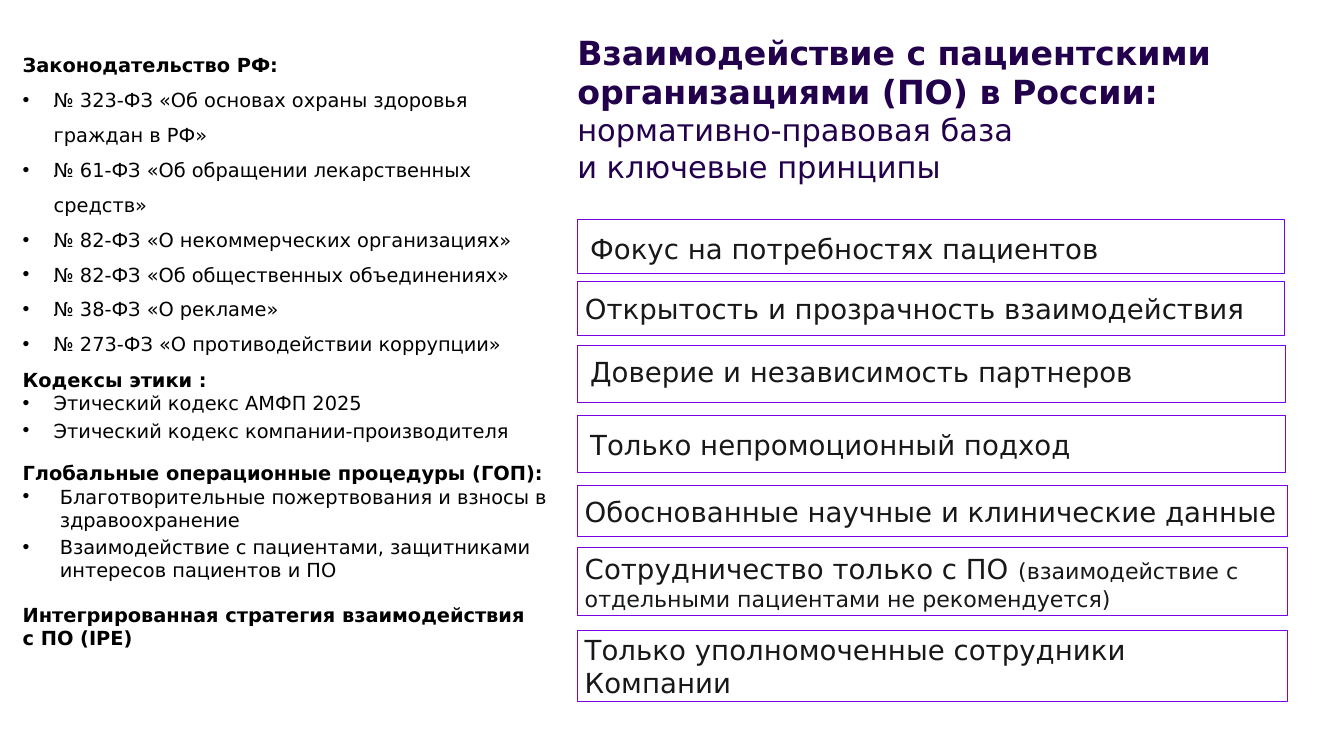
from pptx import Presentation, util as u
from pptx.dml.color import RGBColor
from pptx.enum import shapes, text
from pptx.oxml.ns import qn
from lxml import etree

FONT = "DejaVu Sans"
COLORS = {"title": "23004C", "body": "000000", "principle": "181818",
          "box": "FFFFFF", "border": "7A00E6"}
MM_PER_INCH = 25.4
BODY_SIZE = 18.4
PRINCIPLE_SIZE = 26.25
LEFT_X = 0.2
BOX_X = 7.61

LAWS = ["№ 323-ФЗ «Об основах охраны здоровья граждан в РФ»",
        "№ 61-ФЗ «Об обращении лекарственных средств»",
        "№ 82-ФЗ «О некоммерческих организациях»",
        "№ 82-ФЗ «Об общественных объединениях»",
        "№ 38-ФЗ «О рекламе»",
        "№ 273-ФЗ «О противодействии коррупции»"]
CODES = ["Этический кодекс АМФП 2025",
         "Этический кодекс компании-производителя"]
PROCEDURES = ["Благотворительные пожертвования и взносы в здравоохранение",
              "Взаимодействие с пациентами, защитниками интересов пациентов и ПО"]

# Heading, bullets, top, width, height, indent, line spacing, space after
SECTIONS = [
    ("Законодательство РФ:", LAWS, 0.5, 6.85, 4.28, 0.41, 1.5, 0),
    ("Кодексы этики :", CODES, 4.8, 6.71, 1.08, 0.41, 1, 3.9),
    ("Глобальные операционные процедуры (ГОП):", PROCEDURES,
     6.03, 7.25, 1.7, 0.49, 1, 3.9),
    ("Интегрированная стратегия взаимодействия с ПО (IPE)", [],
     7.9, 6.85, 0.72, 0, 1, 0),
]

# Principles whose text sits in the box: text, note, top, width, height
FILLED_BOXES = [
    ("Открытость и прозрачность взаимодействия", "", 3.71, 9.32, 0.71),
    ("Обоснованные научные и клинические данные", "", 6.4, 9.36, 0.67),
    ("Сотрудничество только с ПО ",
     "(взаимодействие с отдельными пациентами не рекомендуется)", 7.22, 9.36, 0.89),
    ("Только уполномоченные сотрудники Компании", "", 8.31, 9.36, 0.94),
]

# Principles with a separate label: text, box top, width, height, label place, insets
LABELLED_BOXES = [
    ("Фокус на потребностях пациентов", 2.89, 9.32, 0.72,
     (7.68, 3.01, 9.29, 0.54), (0.1, 0.05)),
    ("Доверие и независимость партнеров", 4.55, 9.34, 0.75,
     (7.68, 4.63, 9.29, 0.54), (0.1, 0.05)),
    ("Только непромоционный подход", 5.48, 9.34, 0.75,
     (7.65, 5.57, 8.74, 0.57), (0.13, 0.07)),
]


def inches(*values):
    return [u.Inches(v) for v in values]


def add_run(p, words, size, color, bold=False):
    r = p.add_run()
    r.text = words
    r.font.name = FONT
    r.font.size = u.Pt(size)
    r.font.bold = bold
    r.font.color.rgb = RGBColor.from_string(COLORS[color])


def set_bullet(p, indent):
    pPr = p._p.get_or_add_pPr()
    pPr.set("marL", str(u.Inches(indent)))
    pPr.set("indent", str(-u.Inches(indent)))
    etree.SubElement(pPr, qn("a:buFont")).set("typeface", "Arial")
    etree.SubElement(pPr, qn("a:buChar")).set("char", "•")


def add_textbox(parent, place, insets=(0.1, 0.05), grow=True):
    tf = parent.add_textbox(*inches(*place)).text_frame
    tf.word_wrap = True
    tf.auto_size = (text.MSO_AUTO_SIZE.SHAPE_TO_FIT_TEXT if grow
                    else text.MSO_AUTO_SIZE.NONE)
    tf.margin_left = tf.margin_right = u.Inches(insets[0])
    tf.margin_top = tf.margin_bottom = u.Inches(insets[1])
    return tf


def add_section(parent, heading, bullets, top, width, height, indent, spacing, after):
    tf = add_textbox(parent, (LEFT_X, top, width, height))
    p = tf.paragraphs[0]
    p.line_spacing = spacing
    add_run(p, heading, BODY_SIZE, "body", bold=True)
    for words in bullets:
        p = tf.add_paragraph()
        set_bullet(p, indent)
        p.line_spacing = spacing
        p.space_after = u.Pt(after)
        add_run(p, words, BODY_SIZE, "body")


def add_box(parent, top, width, height):
    sp = parent.add_shape(shapes.MSO_SHAPE.RECTANGLE,
                          *inches(BOX_X, top, width, height))
    sp.shadow.inherit = False
    sp.fill.solid()
    sp.fill.fore_color.rgb = RGBColor.from_string(COLORS["box"])
    sp.line.color.rgb = RGBColor.from_string(COLORS["border"])
    sp.line.width = u.Pt(1)
    return sp


def add_filled_box(parent, words, note, top, width, height):
    tf = add_box(parent, top, width, height).text_frame
    tf.word_wrap = True
    tf.margin_right = u.Inches(0.12)
    tf.vertical_anchor = text.MSO_ANCHOR.MIDDLE
    p = tf.paragraphs[0]
    p.alignment = text.PP_ALIGN.LEFT
    add_run(p, words, PRINCIPLE_SIZE, "principle")
    if note:
        add_run(p, note, 21, "principle")


def add_labelled_box(parent, words, top, width, height, place, insets):
    group = parent.add_group_shape().shapes
    add_box(group, top, width, height)
    tf = add_textbox(group, place, insets)
    add_run(tf.paragraphs[0], words, PRINCIPLE_SIZE, "principle")


def add_title(parent):
    tf = add_textbox(parent, (BOX_X, 0.42, 9.51, 2.17), insets=(0, 0), grow=False)
    p = tf.paragraphs[0]
    add_run(p, "Взаимодействие с пациентскими организациями (ПО) в России: ",
            31.5, "title", bold=True)
    add_run(p, "нормативно-правовая база", 28.9, "title")
    add_run(tf.add_paragraph(), "и ключевые принципы", 28.9, "title")


def main():
    # Slide of 450 by 250 mm
    prs = Presentation()
    prs.slide_width = u.Inches(450 / MM_PER_INCH)
    prs.slide_height = u.Inches(250 / MM_PER_INCH)
    s = prs.slides.add_slide(prs.slide_layouts[6])

    # Title
    add_title(s.shapes)

    # Legal framework on the left
    for section in SECTIONS:
        add_section(s.shapes, *section)

    # Key principles on the right
    for principle in LABELLED_BOXES:
        add_labelled_box(s.shapes, *principle)
    for principle in FILLED_BOXES:
        add_filled_box(s.shapes, *principle)

    prs.save("out.pptx")


if __name__ == "__main__":
    main()
